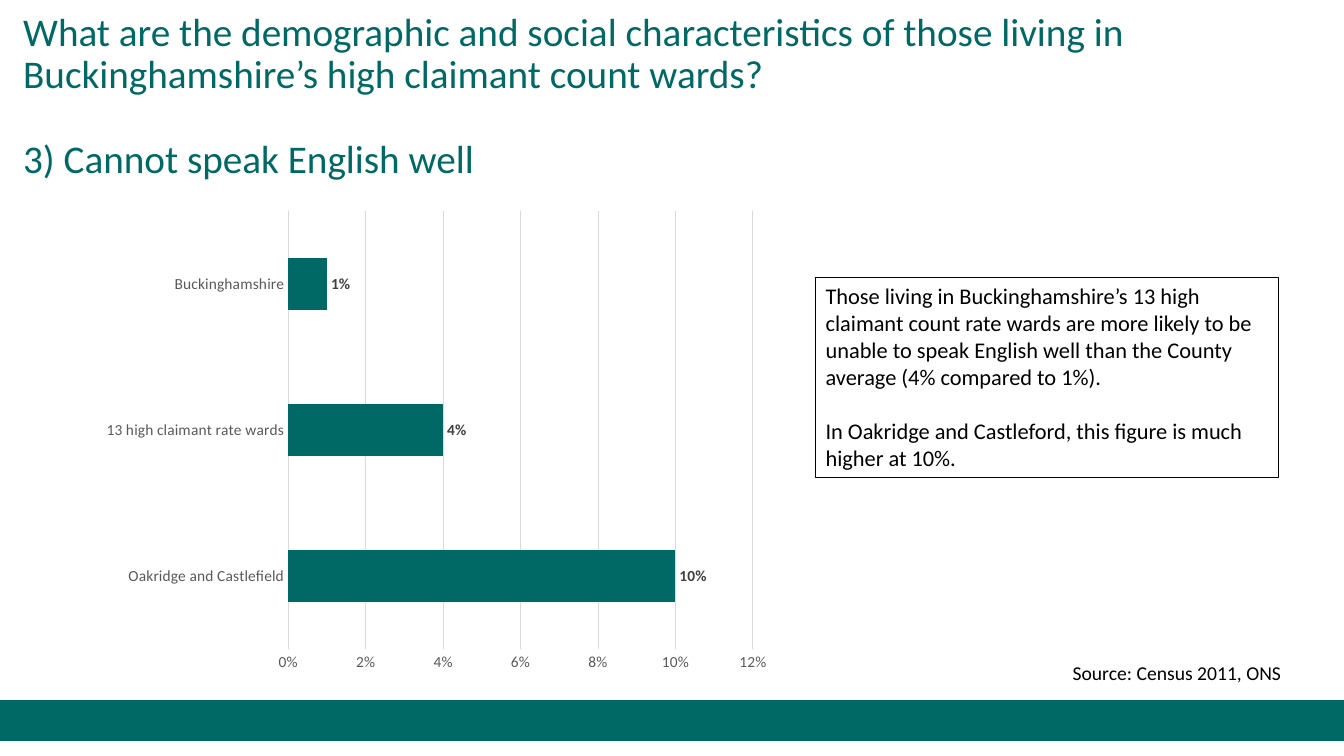
from dataclasses import dataclass

import pptx
import pptx.chart.data
import pptx.dml.color
import pptx.enum.chart
import pptx.enum.shapes
import pptx.enum.text
import pptx.util
from pptx.util import Inches


@dataclass(frozen=True)
class Theme:
    font: str = "Calibri"
    teal: str = "006965"
    black: str = "000000"
    axis_text: str = "595959"
    label_text: str = "404040"
    rule: str = "D9D9D9"
    title_size: int = 28
    body_size: int = 16
    source_size: int = 14
    chart_size: int = 11


THEME = Theme()


def rgb(colour):
    return pptx.dml.color.RGBColor.from_string(colour)


def set_attributes(target, values):
    for name, value in values.items():
        setattr(target, name, value)


def format_font(font, size, colour, bold=False):
    set_attributes(font, {"name": THEME.font, "size": pptx.util.Pt(size), "bold": bold})
    font.color.rgb = rgb(colour)


def format_line(line, colour, width):
    line.color.rgb = rgb(colour)
    line.width = pptx.util.Pt(width)


def place(shape, left, top, width, height):
    set_attributes(shape, {"left": Inches(left), "top": Inches(top),
                           "width": Inches(width), "height": Inches(height)})


def write_paragraphs(text_frame, texts, size, colour, gap=0, line_spacing=1.0):
    """Fill the frame with one paragraph per text, gap points apart."""
    text_frame.word_wrap = True
    for index, text in enumerate(texts):
        paragraph = text_frame.paragraphs[0] if index == 0 else text_frame.add_paragraph()
        set_attributes(paragraph, {
            "alignment": pptx.enum.text.PP_ALIGN.LEFT,
            "line_spacing": line_spacing,
            "space_before": pptx.util.Pt(gap if index else 0),
        })
        run = paragraph.add_run()
        run.text = text
        format_font(run.font, size, colour)


def add_title(slide, texts):
    title = slide.shapes.title
    place(title, 0.13, 0.24, 11.5, 1.45)
    set_attributes(title.text_frame, {
        "auto_size": pptx.enum.text.MSO_AUTO_SIZE.NONE,
        "vertical_anchor": pptx.enum.text.MSO_ANCHOR.MIDDLE,
    })
    write_paragraphs(title.text_frame, texts, THEME.title_size, THEME.teal,
                     gap=30.5, line_spacing=0.9)


def add_footer_band(slide):
    band = slide.shapes.add_shape(pptx.enum.shapes.MSO_SHAPE.RECTANGLE,
                                  Inches(0), Inches(6.95), Inches(13.33), Inches(0.4))
    band.shadow.inherit = False
    band.fill.solid()
    band.fill.fore_color.rgb = rgb(THEME.teal)
    format_line(band.line, THEME.teal, 1)


def add_text(slide, box, texts, size, gap=0):
    text_box = slide.shapes.add_textbox(*map(Inches, box))
    write_paragraphs(text_box.text_frame, texts, size, THEME.black, gap)
    return text_box


def add_bar_chart(slide, box, shares):
    data = pptx.chart.data.CategoryChartData(number_format="0%")
    data.categories = list(shares)
    data.add_series("Cannot speak English well", list(shares.values()))
    chart = slide.shapes.add_chart(pptx.enum.chart.XL_CHART_TYPE.BAR_CLUSTERED,
                                   *map(Inches, box), data).chart
    set_attributes(chart, {"has_legend": False, "has_title": False})
    format_font(chart.font, THEME.chart_size, THEME.black)

    for axis in (chart.category_axis, chart.value_axis):
        set_attributes(axis, {
            "major_tick_mark": pptx.enum.chart.XL_TICK_MARK.NONE,
            "minor_tick_mark": pptx.enum.chart.XL_TICK_MARK.NONE,
        })
        format_font(axis.tick_labels.font, THEME.chart_size, THEME.axis_text)
    format_line(chart.category_axis.format.line, THEME.rule, 0.75)

    value_axis = chart.value_axis
    set_attributes(value_axis, {"minimum_scale": 0, "maximum_scale": 0.12,
                                "major_unit": 0.02, "has_major_gridlines": True})
    set_attributes(value_axis.tick_labels, {"number_format": "0%",
                                            "number_format_is_linked": False})
    value_axis.format.line.fill.background()
    format_line(value_axis.major_gridlines.format.line, THEME.rule, 0.75)

    plot = chart.plots[0]
    set_attributes(plot, {"gap_width": 182, "vary_by_categories": False,
                          "has_data_labels": True})
    bars = plot.series[0].format.fill
    bars.solid()
    bars.fore_color.rgb = rgb(THEME.teal)
    set_attributes(plot.data_labels, {
        "show_value": True,
        "number_format": "0%",
        "number_format_is_linked": False,
        "position": pptx.enum.chart.XL_LABEL_POSITION.OUTSIDE_END,
    })
    format_font(plot.data_labels.font, THEME.chart_size, THEME.label_text, bold=True)


def main():
    presentation = pptx.Presentation()
    set_attributes(presentation, {"slide_width": Inches(13.33), "slide_height": Inches(7.5)})
    slide = presentation.slides.add_slide(presentation.slide_layouts.get_by_name("Title Only"))

    add_footer_band(slide)
    add_title(slide, [
        "What are the demographic and social characteristics of those living in "
        "Buckinghamshire’s high claimant count wards?",
        "3) Cannot speak English well",
    ])
    findings = add_text(slide, (8.09, 2.75, 4.59, 1.99), [
        "Those living in Buckinghamshire’s 13 high claimant count rate wards are more "
        "likely to be unable to speak English well than the County average "
        "(4% compared to 1%).",
        "In Oakridge and Castleford, this figure is much higher at 10%.",
    ], THEME.body_size, gap=19.5)
    format_line(findings.line, THEME.black, 0.75)
    add_text(slide, (10.54, 6.51, 2.6, 0.34), ["Source: Census 2011, ONS"], THEME.source_size)
    add_bar_chart(slide, (0.92, 2, 6.82, 4.76), {
        "Oakridge and Castlefield": 0.10,
        "13 high claimant rate wards": 0.04,
        "Buckinghamshire": 0.01,
    })
    presentation.save("out.pptx")


if __name__ == "__main__":
    main()
